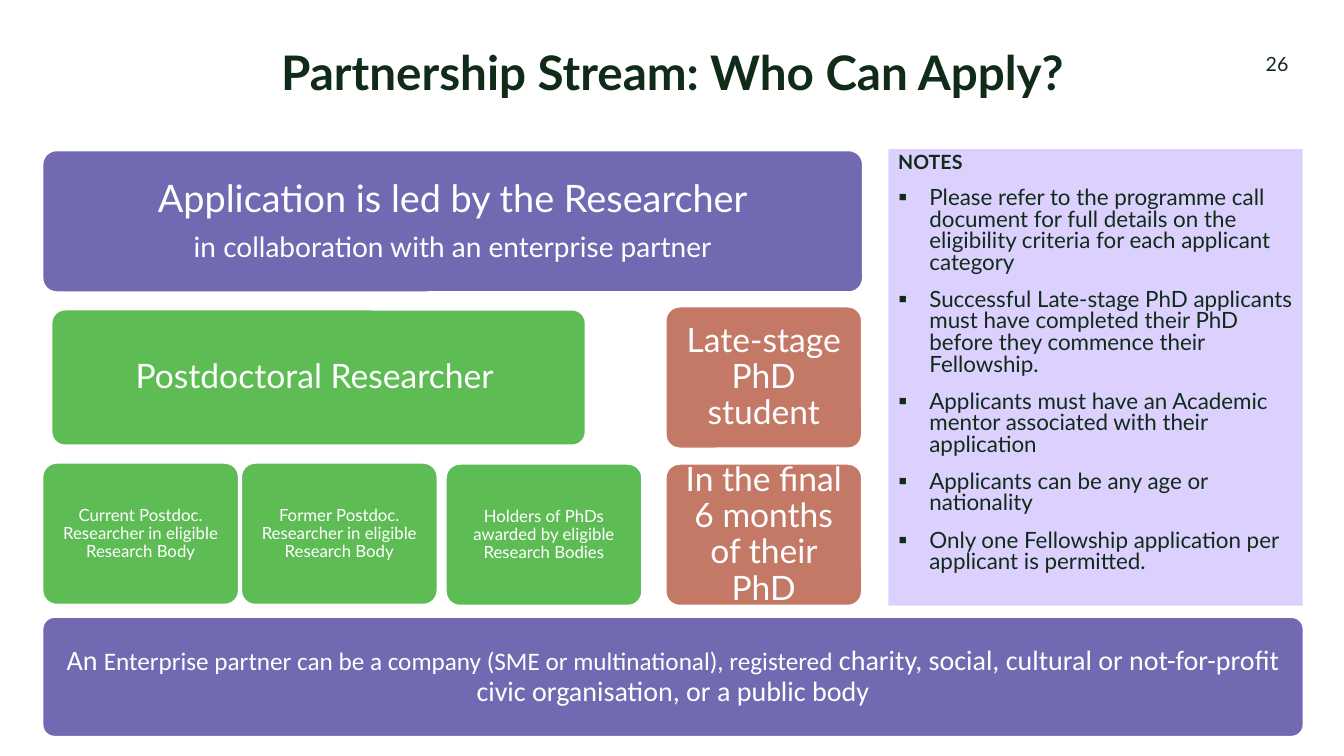
from dataclasses import dataclass

from pptx import Presentation
from pptx.dml.color import RGBColor
from pptx.enum.shapes import MSO_SHAPE as Shape
from pptx.enum.text import MSO_ANCHOR as Anchor, PP_ALIGN as Align
from pptx.oxml import parse_xml
from pptx.oxml.ns import nsdecls
from pptx.util import Inches, Pt


@dataclass(frozen=True)
class Theme:
    font: str = "Lato"
    partner_font: str = "Calibri"
    ink: str = "112B19"
    white: str = "FFFFFF"
    purple: str = "7169B2"
    green: str = "5EBC55"
    clay: str = "C37965"
    lilac: str = "DCD0FF"
    title: int = 34
    lead: int = 27
    group: int = 24
    body: int = 20
    detail: int = 18
    note: int = 16
    label: int = 14
    category: int = 12


THEME = Theme()
CARD_WIDTH, CARD_HEIGHT = 1.95, 1.41
LEFT, LATE_STAGE_LEFT = 0.42, 6.6

NOTES = [
    "Please refer to the programme call document for full details on the "
    "eligibility criteria for each applicant category",
    "Successful Late-stage PhD applicants must have completed their PhD "
    "before they commence their Fellowship.",
    "Applicants must have an Academic mentor associated with their application",
    "Applicants can be any age or nationality",
    "Only one Fellowship application per applicant is permitted.",
]
CATEGORIES = [
    (LEFT, 4.59, "Current Postdoc. Researcher in eligible Research Body"),
    (2.39, 4.59, "Former Postdoc. Researcher in eligible Research Body"),
    (4.42, 4.6, "Holders of PhDs awarded by eligible Research Bodies"),
]
LATE_STAGE = [
    (3.04, "Late-stage PhD student"),
    (4.6, "In the final 6 months of their PhD"),
]


def set_all(target, **values):
    for name, value in values.items():
        setattr(target, name, value)


def add_span(para, text, size, color, font=THEME.font, bold=False):
    span = para.add_run()
    span.text = text
    set_all(span.font, size=Pt(size), name=font, bold=bold)
    span.font.color.rgb = RGBColor.from_string(color)


def add_para(frame, index, **layout):
    """Return the frame's first paragraph for index 0, else a new one."""
    para = frame.add_paragraph() if index else frame.paragraphs[0]
    set_all(para, **layout)
    return para


def set_frame(frame, inset, anchor):
    margins = {f"margin_{side}": Inches(inset)
               for side in ("left", "right", "top", "bottom")}
    set_all(frame, word_wrap=True, vertical_anchor=anchor, **margins)


def add_block(page, kind, place, fill):
    block = page.shapes.add_shape(kind, *map(Inches, place))
    block.shadow.inherit = False
    block.fill.solid()
    block.fill.fore_color.rgb = RGBColor.from_string(fill)
    return block


def add_card(page, place, fill, lines, inset=0.1, font=THEME.font):
    """Add a rounded card; each line is a list of (text, size) spans."""
    card = add_block(page, Shape.ROUNDED_RECTANGLE, place, fill)
    card.adjustments[0] = 0.1
    card.line.color.rgb = RGBColor.from_string(THEME.white)
    card.line.width = Pt(1.5)
    frame = card.text_frame
    set_frame(frame, inset, Anchor.MIDDLE)
    for index, spans in enumerate(lines):
        para = add_para(frame, index, alignment=Align.CENTER, line_spacing=0.9,
                        space_after=Pt(round(spans[0][1] * 0.35)))
        for text, size in spans:
            add_span(para, text, size, THEME.white, font)


def add_label(page, place, text, size, align, bold=False, inset=None):
    box = page.shapes.add_textbox(*map(Inches, place))
    frame = box.text_frame
    frame.word_wrap = True
    if inset is not None:
        set_frame(frame, inset, Anchor.TOP)
    para = add_para(frame, 0, alignment=align, line_spacing=0.9)
    add_span(para, text, size, THEME.ink, bold=bold)


def add_bullet(para):
    properties = para._p.get_or_add_pPr()
    properties.set("marL", str(Inches(0.31)))
    properties.set("indent", str(-Inches(0.31)))
    for markup in (
        f'<a:buClr {nsdecls("a")}><a:srgbClr val="{THEME.ink}"/></a:buClr>',
        f'<a:buSzPct {nsdecls("a")} val="105000"/>',
        f'<a:buFont {nsdecls("a")} typeface="{THEME.font}"/>',
        f'<a:buChar {nsdecls("a")} char="▪"/>',
    ):
        properties.append(parse_xml(markup))


def add_notes_panel(page):
    panel = add_block(page, Shape.RECTANGLE, (8.81, 1.48, 4.11, 4.53), THEME.lilac)
    panel.line.fill.background()
    frame = panel.text_frame
    set_all(frame, word_wrap=True, vertical_anchor=Anchor.TOP)
    layout = dict(alignment=Align.LEFT, line_spacing=0.8, space_after=Pt(8))
    heading = add_para(frame, 0, **layout)
    add_span(heading, "NOTES", THEME.label, THEME.ink, bold=True)
    for index, note in enumerate(NOTES, start=1):
        para = add_para(frame, index, space_before=Pt(3.2), **layout)
        add_bullet(para)
        add_span(para, note, THEME.note, THEME.ink)


def main():
    deck = Presentation()
    set_all(deck, slide_width=Inches(13.33), slide_height=Inches(7.5))
    page = deck.slides.add_slide(deck.slide_layouts[6])

    add_label(page, (12.18, 0.54, 0.6, 0.69), "26", THEME.label, Align.RIGHT, inset=0)
    add_label(page, (2.69, 0.44, 10.64, 1.04), "Partnership Stream: Who Can Apply?",
              THEME.title, Align.LEFT, bold=True)

    add_card(page, (LEFT, 1.49, 8.14, CARD_HEIGHT), THEME.purple, [
        [("Application is led by the Researcher", THEME.lead)],
        [("in collaboration with an enterprise partner", THEME.body)],
    ])
    add_card(page, (0.51, 3.07, 5.3, 1.35), THEME.green,
             [[("Postdoctoral Researcher ", THEME.group)]])
    for left, top, text in CATEGORIES:
        add_card(page, (left, top, CARD_WIDTH, CARD_HEIGHT), THEME.green,
                 [[(text, THEME.category)]], inset=0.05)
    for top, text in LATE_STAGE:
        add_card(page, (LATE_STAGE_LEFT, top, CARD_WIDTH, CARD_HEIGHT), THEME.clay,
                 [[(text, THEME.group)]])

    add_notes_panel(page)
    add_card(page, (LEFT, 6.12, 12.51, 1.19), THEME.purple, [[
        ("An ", THEME.body),
        ("Enterprise partner can be a company (SME or multinational), registered ",
         THEME.detail),
        ("charity, social, cultural or not-for-profit civic organisation, "
         "or a public body", THEME.body),
    ]], inset=0.08, font=THEME.partner_font)
    deck.save("out.pptx")


if __name__ == "__main__":
    main()
